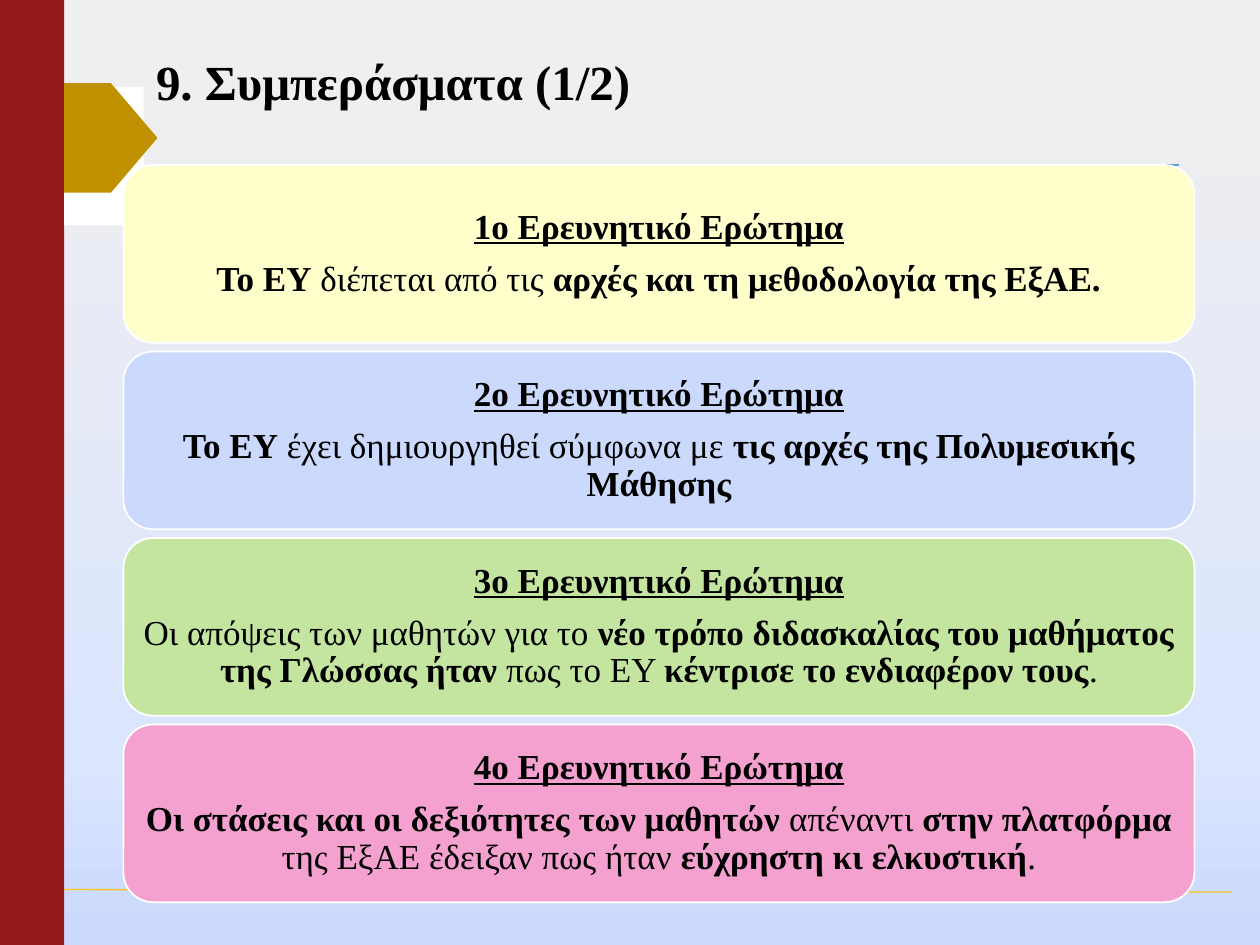
import copy

import pptx
import pptx.util
import pptx.dml.color
import pptx.enum.shapes
import pptx.enum.text
import pptx.oxml.ns
import pptx.oxml.xmlchemy

COLORS = {
    "black": "000000", "white": "FFFFFF", "red": "931B1B", "gold": "BF9000",
    "blue line": "5B9BD5", "gold line": "FFC61A",
    "yellow": "FFFFCC", "blue": "CBD9FD", "green": "C4E59F", "pink": "F5A1CF",
}
BACKGROUND_STOPS = [(0.05, "F0EFEF"), (0.8, "DBE5FD"), (0.99, "CBD9FD")]
COLUMNS, ROWS = 100, 75
SHAPES = pptx.enum.shapes.MSO_SHAPE

# Each card: fill, heading, then (text, bold) runs
CARDS = [
    ("yellow", "1o Ερευνητικό Ερώτημα", [
        ("Το ΕΥ ", True), ("διέπεται από τις ", False),
        ("αρχές και τη μεθοδολογία της ΕξΑΕ", True), (".", True)]),
    ("blue", "2ο Ερευνητικό Ερώτημα", [
        ("Το ΕΥ ", True), ("έχει δημιουργηθεί σύμφωνα με ", False),
        ("τις αρχές της Πολυμεσικής Μάθησης", True)]),
    ("green", "3ο Ερευνητικό Ερώτημα", [
        ("Οι απόψεις των μαθητών για το ", False),
        ("νέο τρόπο διδασκαλίας του μαθήματος της Γλώσσας ήταν ", True),
        ("πως το ΕΥ ", False), ("κέντρισε το ενδιαφέρον τους", True),
        (".", False)]),
    ("pink", "4ο Ερευνητικό Ερώτημα", [
        ("Οι στάσεις και οι δεξιότητες των μαθητών ", True),
        ("απέναντι ", False), ("στην πλατφόρμα ", True),
        ("της ΕξΑΕ έδειξαν πως ήταν ", False),
        ("εύχρηστη κι ελκυστική", True), (".", False)]),
]


def rgb(hex_string):
    return pptx.dml.color.RGBColor.from_string(hex_string)


class SlideBuilder:
    """Holds the style and the current slide; lengths are grid columns and rows."""

    font_name = "Times New Roman"
    title_size = 28
    card_size = 20

    def __init__(self, presentation):
        self.slide = presentation.slides.add_slide(presentation.slide_layouts[6])
        self.column = presentation.slide_width / COLUMNS
        self.row = presentation.slide_height / ROWS

    def place(self, left, top, width, height):
        return (round(left * self.column), round(top * self.row),
                round(width * self.column), round(height * self.row))

    def background(self, stops):
        fill = self.slide.background.fill
        fill.gradient()
        fill.gradient_angle = 270
        last = list(self.slide.element.iter(pptx.oxml.ns.qn("a:gs")))[-1]
        last.addnext(copy.deepcopy(last))
        for stop, (position, color) in zip(fill.gradient_stops, stops):
            stop.position = position
            stop.color.rgb = rgb(color)

    def shape(self, kind, box, fill, line=None):
        shape = self.slide.shapes.add_shape(kind, *self.place(*box))
        shape.shadow.inherit = False
        shape.fill.solid()
        shape.fill.fore_color.rgb = rgb(COLORS[fill])
        if line:
            shape.line.color.rgb = rgb(COLORS[line])
            shape.line.width = pptx.util.Pt(1)
        else:
            shape.line.fill.background()
        return shape

    def line(self, start, end, color):
        connector = self.slide.shapes.add_connector(
            pptx.enum.shapes.MSO_CONNECTOR.STRAIGHT, *self.place(*start, *end))
        connector.line.color.rgb = rgb(COLORS[color])
        connector.line.width = pptx.util.Pt(0.75)
        no_shadow = pptx.oxml.xmlchemy.OxmlElement("a:effectLst")
        connector.element.spPr.append(no_shadow)

    def run(self, paragraph, text, size, bold=True, underline=False):
        run = paragraph.add_run()
        run.text = text
        run.font.name = self.font_name
        run.font.size = pptx.util.Pt(size)
        run.font.bold = bold
        run.font.underline = underline
        run.font.color.rgb = rgb(COLORS["black"])

    def title(self, box, text):
        frame = self.slide.shapes.add_textbox(*self.place(*box)).text_frame
        frame.word_wrap = True
        frame.vertical_anchor = pptx.enum.text.MSO_ANCHOR.MIDDLE
        frame.paragraphs[0].line_spacing = 0.9
        self.run(frame.paragraphs[0], text, self.title_size)

    def card(self, box, fill, heading, runs):
        frame = self.shape(SHAPES.ROUNDED_RECTANGLE, box, fill, "white").text_frame
        frame.word_wrap = True
        frame.vertical_anchor = pptx.enum.text.MSO_ANCHOR.MIDDLE
        frame.margin_left = frame.margin_right = pptx.util.Inches(0.08)
        frame.margin_top = frame.margin_bottom = pptx.util.Inches(0.04)
        heading_paragraph, body_paragraph = frame.paragraphs[0], frame.add_paragraph()
        for paragraph in (heading_paragraph, body_paragraph):
            paragraph.alignment = pptx.enum.text.PP_ALIGN.CENTER
            paragraph.line_spacing = 0.9
            paragraph.space_after = pptx.util.Pt(8)
        self.run(heading_paragraph, heading, self.card_size, underline=True)
        for text, bold in runs:
            self.run(body_paragraph, text, self.card_size, bold)


def main():
    presentation = pptx.Presentation()
    presentation.slide_width = pptx.util.Inches(10)
    presentation.slide_height = pptx.util.Inches(7.5)
    builder = SlideBuilder(presentation)

    # Background, side bar, rules and title marker
    builder.background(BACKGROUND_STOPS)
    builder.shape(SHAPES.RECTANGLE, (0, 0, 5.1, ROWS), "red")
    builder.line((16.6, 13.1), (93.6, 13.1), "blue line")
    builder.line((5.1, 70.6), (97.8, 70.8), "gold line")
    builder.shape(SHAPES.RECTANGLE, (5.1, 6.9, 6.3, 11), "white")
    builder.shape(SHAPES.PENTAGON, (5.1, 6.6, 7.4, 8.7), "gold")

    # Title
    builder.title((11.4, 3.6, 85, 6.3), "9. Συμπεράσματα (1/2)")

    # One card per research question
    top, height, gap = 13.1, 14.1, 0.7
    for index, (fill, heading, runs) in enumerate(CARDS):
        box = (9.8, top + index * (height + gap), 85, height)
        builder.card(box, fill, heading, runs)

    presentation.save("out.pptx")


if __name__ == "__main__":
    main()
